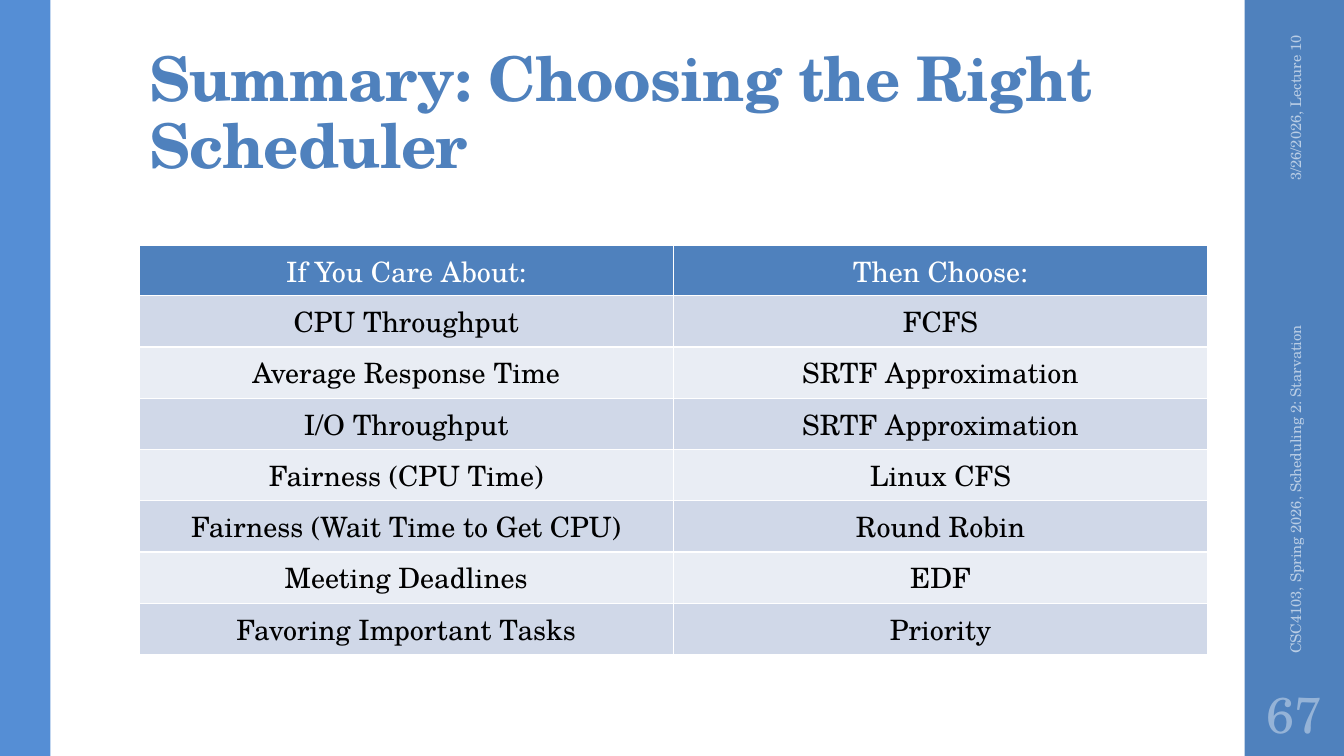
import pptx
import pptx.dml.color
import pptx.enum.shapes
import pptx.enum.text
import pptx.oxml
import pptx.util

Pt = pptx.util.Pt
ALIGN = pptx.enum.text.PP_ALIGN
ANCHOR = pptx.enum.text.MSO_ANCHOR
NS = 'xmlns:a="http://schemas.openxmlformats.org/drawingml/2006/main"'
BLUE = "4F81BD"


def paint(target, color):
    """Give a shape, cell or font a solid colour."""
    target.fill.solid()
    target.fill.fore_color.rgb = pptx.dml.color.RGBColor.from_string(color)


def write(frame, text, size, color, align):
    """Put one styled paragraph in a text frame and return it."""
    para = frame.paragraphs[0]
    para.text = text
    para.alignment = align
    font = para.runs[0].font
    font.name = "TeX Gyre Schola"
    font.size = Pt(size)
    font.bold = False
    paint(font, color)
    return para


deck = pptx.Presentation()
deck.slide_width, deck.slide_height = Pt(960), Pt(540)
slide = deck.slides.add_slide(deck.slide_layouts[6])
shapes = slide.shapes

# Side bands
for left, width, color in [(889, 71, BLUE), (0, 36, "558ED5")]:
    band = shapes.add_shape(pptx.enum.shapes.MSO_SHAPE.RECTANGLE,
                            Pt(left), 0, Pt(width), Pt(540))
    band.shadow.inherit = False
    paint(band, color)
    band.line.fill.background()

# Title
title = shapes.add_textbox(Pt(99.4), Pt(23), Pt(763.2), Pt(110.2))
frame = title.text_frame
frame.word_wrap = True
frame.vertical_anchor = ANCHOR.BOTTOM
frame.margin_top = Pt(2.2)
para = write(frame, "Summary: Choosing the Right Scheduler", 44, BLUE, ALIGN.LEFT)
para.line_spacing = 0.9
para.runs[0].font.bold = True
para.runs[0].font._element.set("spc", "-50")

# Table of goals and schedulers
rows = [
    ("If You Care About:", "Then Choose:"),
    ("CPU Throughput", "FCFS"),
    ("Average Response Time", "SRTF Approximation"),
    ("I/O Throughput", "SRTF Approximation"),
    ("Fairness (CPU Time)", "Linux CFS"),
    ("Fairness (Wait Time to Get CPU)", "Round Robin"),
    ("Meeting Deadlines", "EDF"),
    ("Favoring Important Tasks", "Priority"),
]
table = shapes.add_table(len(rows), 2, Pt(99.4), Pt(175.3), Pt(763.2), Pt(292.2)).table
for r, row in enumerate(rows):
    table.rows[r].height = Pt(36.6 if r else 36)
    fill = BLUE if r == 0 else ("E9EDF4", "D0D8E8")[r % 2]
    for c, text in enumerate(row):
        cell = table.cell(r, c)
        props = cell._tc.get_or_add_tcPr()
        for side in "LRTB":
            props.append(pptx.oxml.parse_xml(
                f'<a:ln{side} {NS} w="{Pt(1)}"><a:solidFill>'
                f'<a:srgbClr val="FFFFFF"/></a:solidFill></a:ln{side}>'))
        paint(cell, fill)
        write(cell.text_frame, text, 20, "000000" if r else "FFFFFF", ALIGN.CENTER)

# Date, footer and slide number
notes = [
    ("3/26/2026, Lecture 10", 850.3, 78.5, 149.8, 28.8, 270, 10.5, "B9CDE5", ALIGN.RIGHT),
    ("CSC4103, Spring 2026, Scheduling 2: Starvation",
     784.1, 318.6, 282.2, 28.8, 270, 10.5, "B9CDE5", ALIGN.LEFT),
    ("67", 889.4, 486, 71, 46.8, 0, 36, "95B3D7", ALIGN.CENTER),
]
for text, left, top, width, height, turn, size, color, align in notes:
    box = shapes.add_textbox(Pt(left), Pt(top), Pt(width), Pt(height))
    box.rotation = turn
    frame = box.text_frame
    frame.word_wrap = True
    frame.vertical_anchor = ANCHOR.MIDDLE
    if not turn:
        frame.margin_left = frame.margin_right = Pt(3.6)
    write(frame, text, size, color, align)

deck.save("out.pptx")
